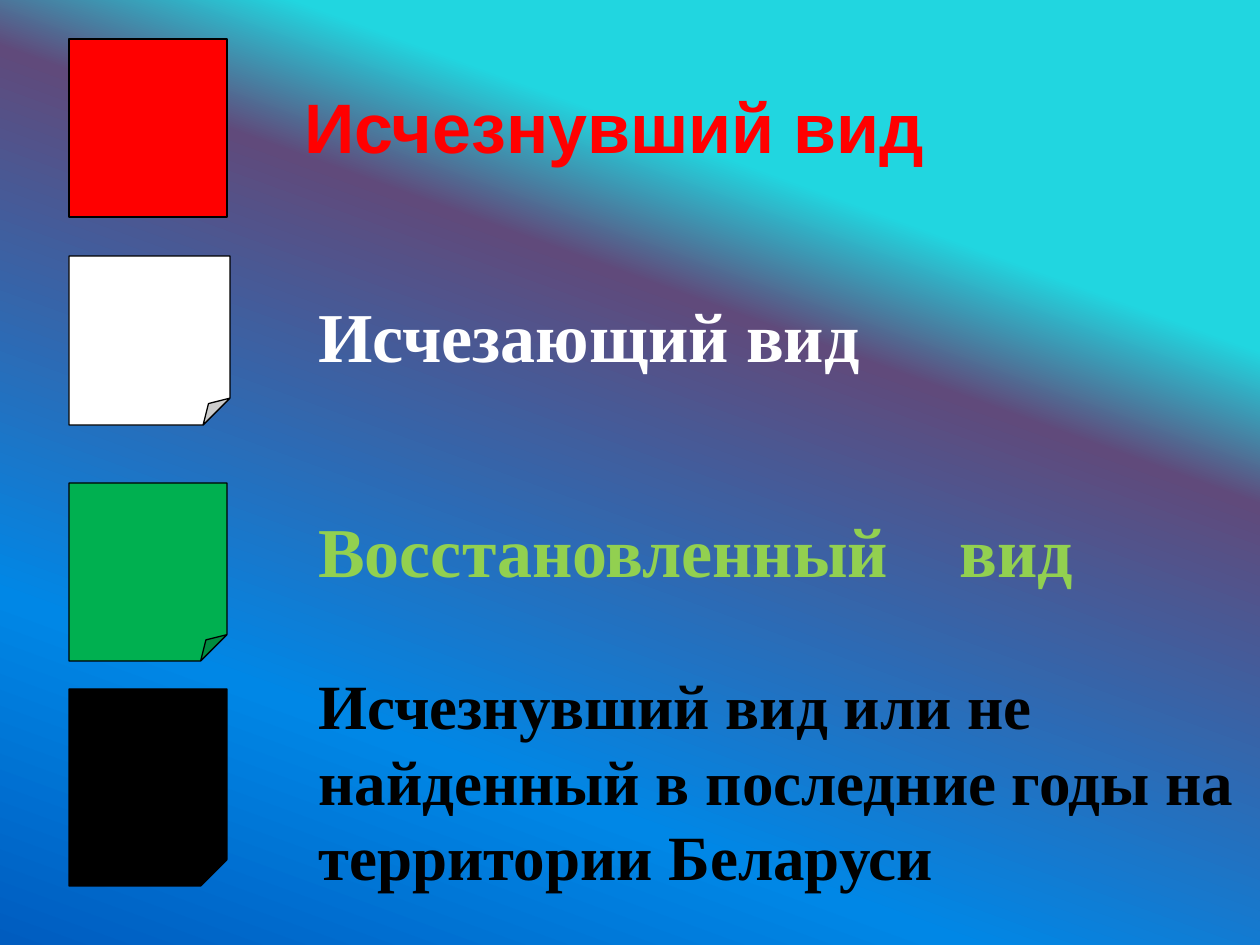
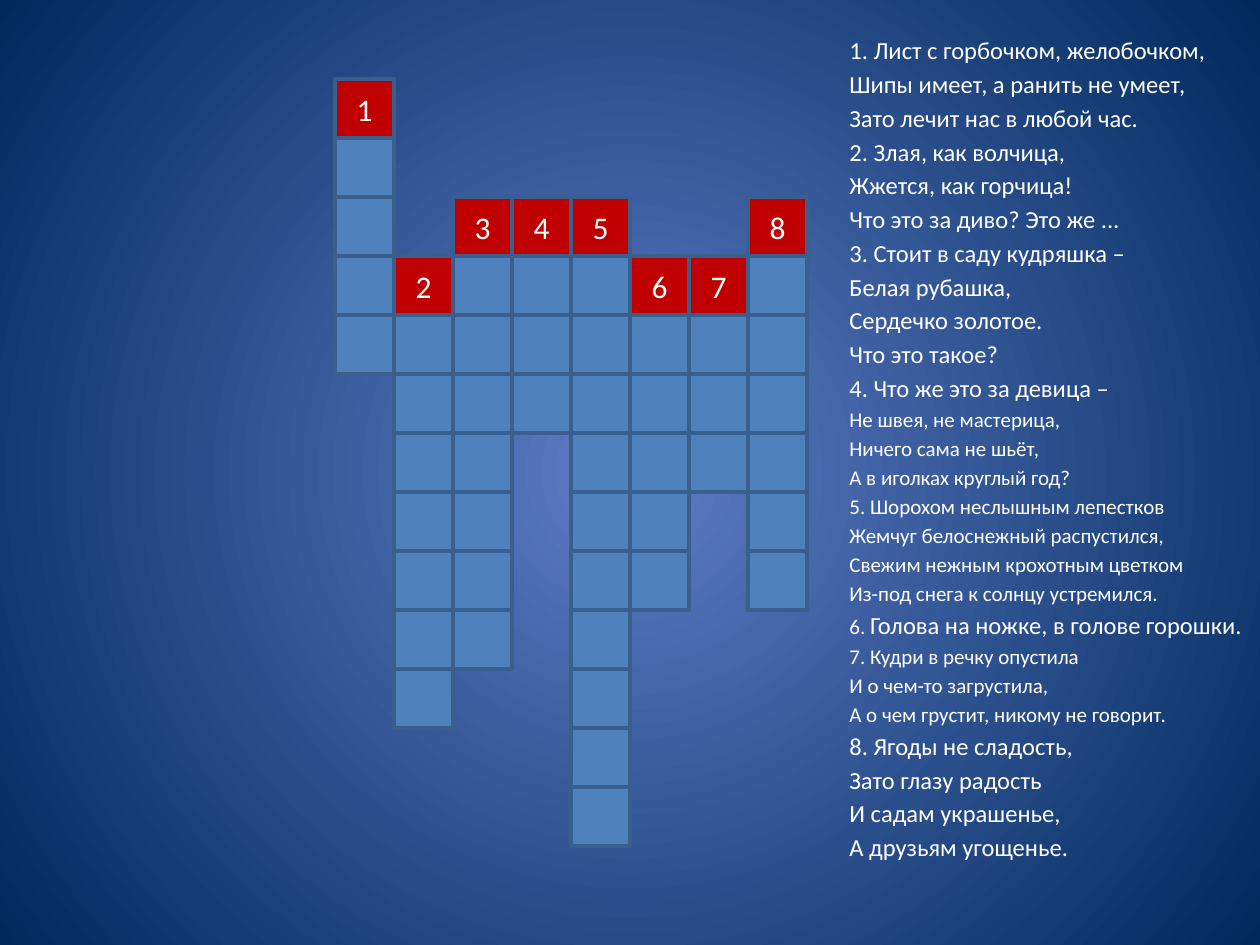
from pptx import Presentation
from pptx import util as u
from pptx.dml.color import RGBColor
from pptx.enum import shapes, text
from pptx.oxml import parse_xml
from pptx.oxml.ns import nsdecls, qn

PX = u.Inches(1) / 126
WIDTH, HEIGHT = 1260, 945
TITLE_ONLY, BLANK = 5, 6
RECT = shapes.MSO_SHAPE.RECTANGLE
FOLDED = shapes.MSO_SHAPE.FOLDED_CORNER
SERIF, SANS, BODY = "Times New Roman", "Arial", "Calibri"
WHITE, BLACK = "FFFFFF", "000000"

LEGEND_BACKGROUND = (
    [(25, "21D6E0"), (36, "604A7B"), (75, "0087E6"), (100, "005CBF")],
    '<a:lin ang="6600000" scaled="0"/>',
)
CROSSWORD_BACKGROUND = (
    [(0, "5E7CC5"), (100, "00295C")],
    '<a:path path="circle"><a:fillToRect l="50000" t="50000" r="50000" b="50000"/></a:path>',
)

# card outline, card box, card colour, label, label box, font, size, label colour
LEGEND = [
    (RECT, (69, 39, 158, 178), "FF0000",
     "Исчезнувший вид", (292, 77, 843, 97), SANS, 40, "FF0000"),
    (FOLDED, (69, 256, 161, 169), WHITE,
     "Исчезающий вид", (306, 286, 869, 97), SERIF, 40, WHITE),
    (FOLDED, (69, 483, 158, 178), "00B050",
     "Восстановленный\tвид", (306, 501, 830, 97), SERIF, 40, "92D050"),
    (FOLDED, (69, 689, 158, 197), BLACK,
     "Исчезнувший вид или не найденный в последние годы на территории Беларуси",
     (306, 659, 954, 242), SERIF, 36, BLACK),
]
LABEL_TAB = 641

# row of the number, cells including the number
ANSWERS = [(0, 5), (3, 8), (2, 8), (2, 4), (2, 11), (3, 6), (3, 4), (2, 7)]
GRID_LEFT, GRID_TOP, CELL = 335, 79, 59
NUMBER_FILL, CELL_FILL, CELL_LINE = "C00000", "4F81BD", "3A5F8C"

RIDDLES_BOX = (837, 29, 423, 876)
# size, lines; a line in parts is a list of (text, size)
RIDDLES = [
    (14, ["1. Лист с горбочком, желобочком,",
          "Шипы имеет, а ранить не умеет,",
          "Зато лечит нас в любой час.",
          "2. Злая, как волчица,",
          "Жжется, как горчица!",
          "Что это за диво? Это же ...",
          "3. Стоит в саду кудряшка –",
          "Белая рубашка,",
          "Сердечко золотое.",
          "Что это такое?",
          "4. Что же это за девица –"]),
    (12, ["Не швея, не мастерица,",
          "Ничего сама не шьёт,",
          "А в иголках круглый год?",
          "5. Шорохом неслышным лепестков",
          "Жемчуг белоснежный распустился,",
          "Свежим нежным крохотным цветком",
          "Из-под снега к солнцу устремился.",
          [("6. ", 12), ("Голова на ножке, в голове горошки.", 14)],
          "7. Кудри в речку опустила",
          "И о чем-то загрустила,",
          "А о чем грустит, никому не говорит."]),
    (14, ["8. Ягоды не сладость,",
          "Зато глазу радость",
          "И садам украшенье,",
          "А друзьям угощенье."]),
]


def px(length):
    return u.Emu(round(length * PX))


def colour(value):
    return RGBColor.from_string(value)


def set_font(target, name, size, value, bold=False):
    font = target.font
    font.name, font.size, font.bold = name, u.Pt(size), bold
    font.color.rgb = colour(value)


def set_background(slide, stops, direction):
    stop_xml = "".join(
        f'<a:gs pos="{percent * 1000}"><a:srgbClr val="{value}"/></a:gs>'
        for percent, value in stops)
    background = parse_xml(
        f'<p:bg {nsdecls("p", "a")}><p:bgPr><a:gradFill rotWithShape="1">'
        f'<a:gsLst>{stop_xml}</a:gsLst>{direction}</a:gradFill>'
        f'<a:effectLst/></p:bgPr></p:bg>')
    slide.element.find(qn("p:cSld")).insert(0, background)


def add_box(slide, outline, box, fill, line, line_width):
    shape = slide.shapes.add_shape(outline, *map(px, box))
    shape.shadow.inherit = False
    shape.fill.solid()
    shape.fill.fore_color.rgb = colour(fill)
    shape.line.color.rgb = colour(line)
    shape.line.width = u.Pt(line_width)
    return shape


def add_tab(paragraph, position):
    paragraph._p.get_or_add_pPr().append(parse_xml(
        f'<a:tabLst {nsdecls("a")}><a:tab pos="{px(position)}" algn="l"/></a:tabLst>'))


def build_legend(deck):
    slide = deck.slides.add_slide(deck.slide_layouts[TITLE_ONLY])
    set_background(slide, *LEGEND_BACKGROUND)
    for row, (outline, card, fill, words, box, font, size, value) in enumerate(LEGEND):
        add_box(slide, outline, card, fill, BLACK, 0.75)
        if row == 0:
            label = slide.shapes.title
            label.left, label.top, label.width, label.height = map(px, box)
        else:
            label = slide.shapes.add_textbox(*map(px, box))
        frame = label.text_frame
        frame.word_wrap = True
        frame.auto_size = text.MSO_AUTO_SIZE.SHAPE_TO_FIT_TEXT
        frame.vertical_anchor = text.MSO_ANCHOR.MIDDLE
        paragraph = frame.paragraphs[0]
        paragraph.text = words
        paragraph.alignment = text.PP_ALIGN.LEFT
        if "\t" in words:
            add_tab(paragraph, LABEL_TAB)
        set_font(paragraph, font, size, value, bold=True)


def add_answers(slide):
    for column, (first_row, length) in enumerate(ANSWERS):
        for step in range(length):
            place = (GRID_LEFT + column * CELL,
                     GRID_TOP + (first_row + step) * CELL, CELL, CELL)
            fill = CELL_FILL if step else NUMBER_FILL
            cell = add_box(slide, RECT, place, fill, CELL_LINE, 2)
            if step == 0:
                cell.text_frame.vertical_anchor = text.MSO_ANCHOR.MIDDLE
                number = cell.text_frame.paragraphs[0]
                number.text = str(column + 1)
                number.alignment = text.PP_ALIGN.CENTER
                set_font(number, BODY, 18, WHITE)


def add_riddles(slide):
    frame = slide.shapes.add_textbox(*map(px, RIDDLES_BOX)).text_frame
    frame.word_wrap = True
    lines = [(size, line) for size, verse in RIDDLES for line in verse]
    for index, (size, line) in enumerate(lines):
        paragraph = frame.add_paragraph() if index else frame.paragraphs[0]
        if index:
            paragraph.space_before = u.Pt(round(size * 0.18, 1))
        if isinstance(line, str):
            paragraph.text = line
            set_font(paragraph, BODY, size, WHITE)
        else:
            for part, part_size in line:
                run = paragraph.add_run()
                run.text = part
                set_font(run, BODY, part_size, WHITE)


def build_crossword(deck):
    slide = deck.slides.add_slide(deck.slide_layouts[BLANK])
    set_background(slide, *CROSSWORD_BACKGROUND)
    add_answers(slide)
    add_riddles(slide)


def main():
    deck = Presentation()
    deck.slide_width, deck.slide_height = px(WIDTH), px(HEIGHT)
    build_legend(deck)
    build_crossword(deck)
    deck.save("out.pptx")


if __name__ == "__main__":
    main()
